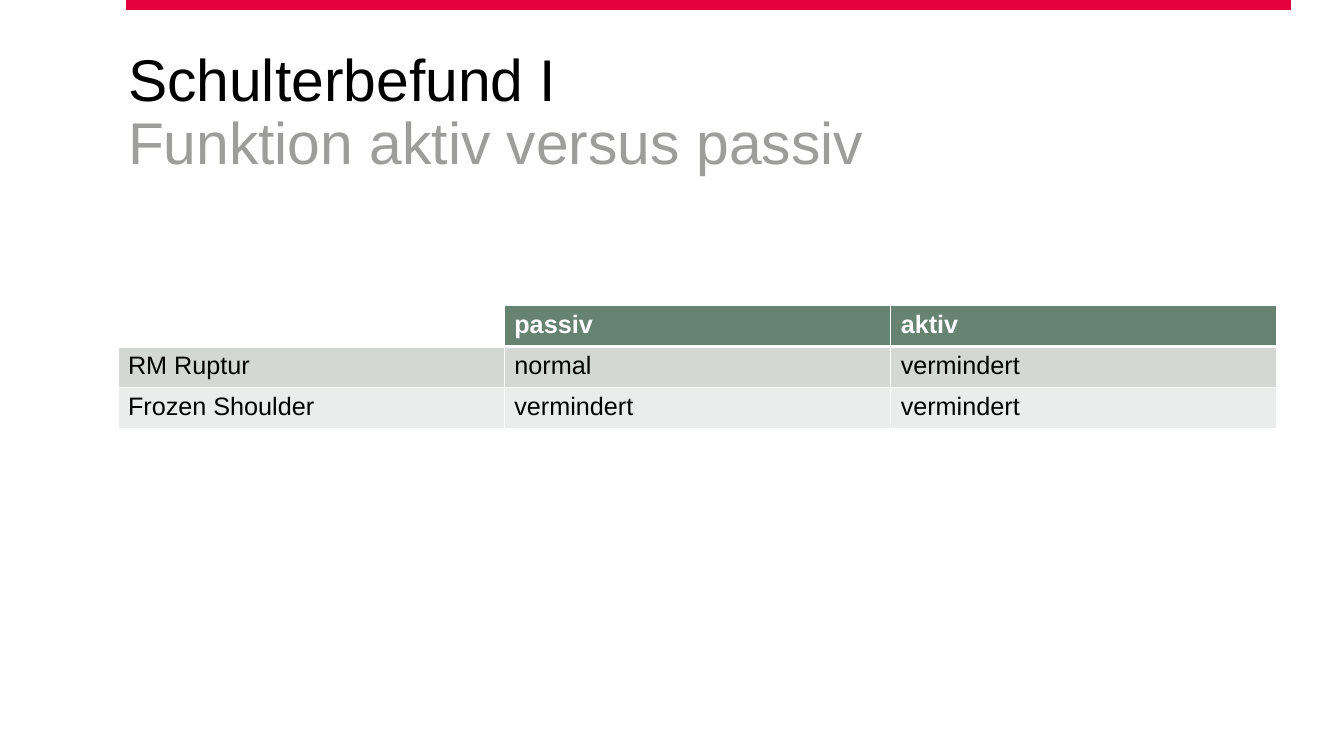
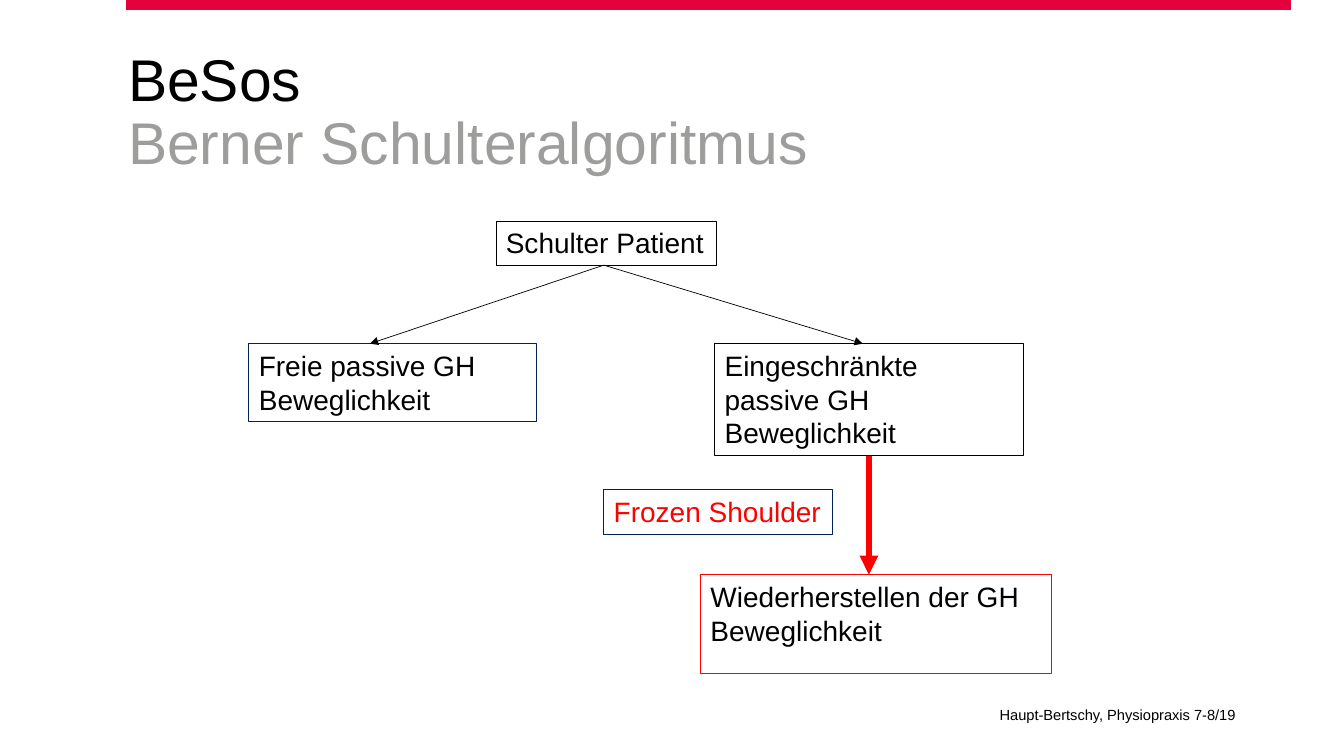
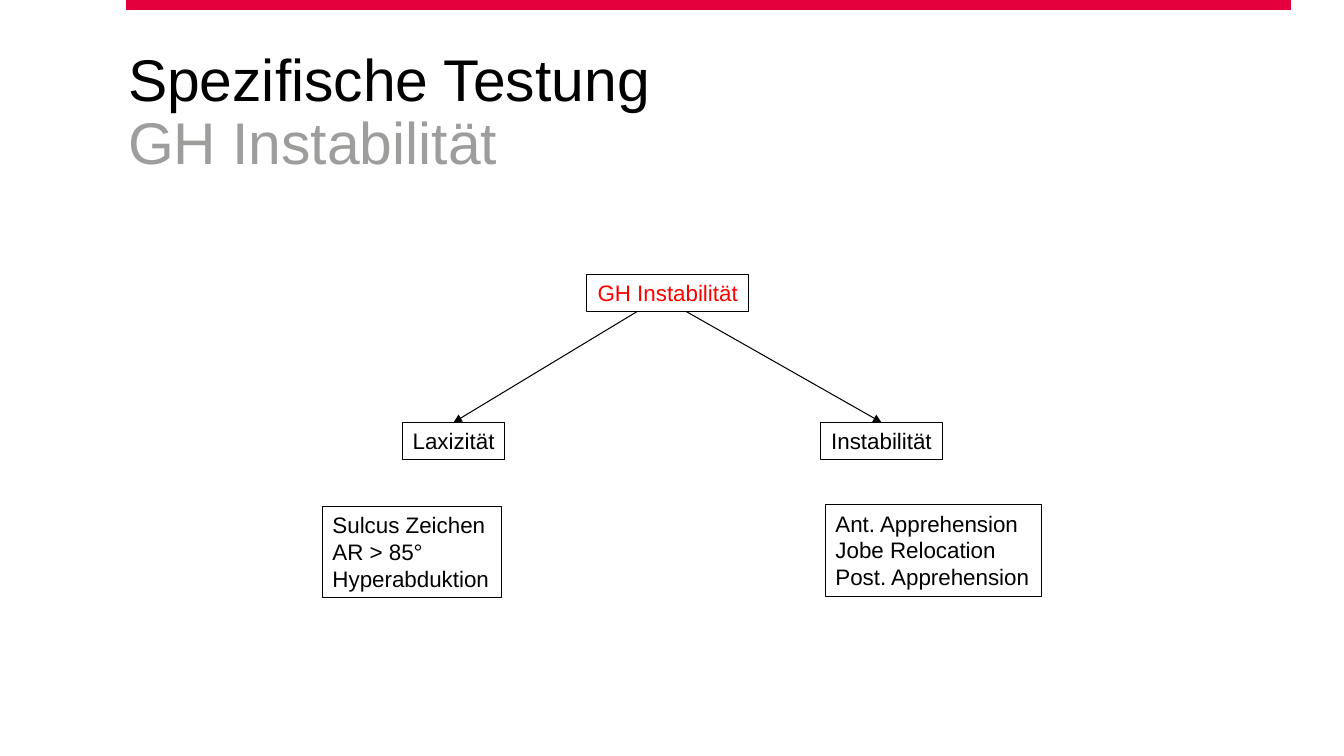
import pptx
import pptx.util
import pptx.dml.color
import pptx.enum.shapes
import pptx.enum.text
import pptx.oxml.xmlchemy

Pt = pptx.util.Pt
RGB = pptx.dml.color.RGBColor
ALIGN = pptx.enum.text.PP_ALIGN
Element = pptx.oxml.xmlchemy.OxmlElement

BLACK = RGB(0x00, 0x00, 0x00)
WHITE = RGB(0xFF, 0xFF, 0xFF)
GREY = RGB(0x9D, 0x9D, 0x9C)
CRIMSON = RGB(0xE4, 0x00, 0x3C)
RED = RGB(0xFF, 0x00, 0x00)
NAVY = RGB(0x00, 0x20, 0x60)
GREEN = RGB(0x66, 0x82, 0x71)
ROW_FILLS = (RGB(0xD3, 0xD8, 0xD5), RGB(0xEA, 0xED, 0xEB))
TOP, BOTTOM = 0, 2


class Deck:
    """Holds the shared style and the current slide."""
    font = "Arial"
    left, width = 84.25, 828

    def __init__(self):
        self.prs = pptx.Presentation()
        self.prs.slide_width, self.prs.slide_height = Pt(960), Pt(540)

    def slide(self, title, subtitle):
        self.s = self.prs.slides.add_slide(self.prs.slide_layouts[1])
        self.line((90, 3.6), (922.3, 3.6), CRIMSON, 7.5, arrow=False)
        heading, body = self.s.placeholders
        self.heading(body, subtitle, 68.4, 51, GREY)
        self.heading(heading, title, 23, 59, BLACK)

    def heading(self, sp, text, top, height, color):
        sp.left, sp.top = Pt(self.left), Pt(top)
        sp.width, sp.height = Pt(self.width), Pt(height)
        self.frame(sp, True, 7.2)
        p = sp.text_frame.paragraphs[0]
        pPr = p._p.get_or_add_pPr()
        pPr.set("marL", "0")
        pPr.set("indent", "0")
        pPr.append(Element("a:buNone"))
        p.space_before = Pt(0)
        p.alignment = ALIGN.LEFT
        self.run(p, text, 42, color)

    def frame(self, sp, wrap, inset=3.6):
        tf = sp.text_frame
        tf.word_wrap = wrap
        tf.auto_size = pptx.enum.text.MSO_AUTO_SIZE.NONE
        tf.vertical_anchor = pptx.enum.text.MSO_ANCHOR.TOP
        tf.margin_left = tf.margin_right = Pt(7.2)
        tf.margin_top, tf.margin_bottom = Pt(inset), Pt(3.6)

    def run(self, p, text, size, color, bold=False):
        r = p.add_run()
        r.text = text
        r.font.name, r.font.size, r.font.bold = self.font, Pt(size), bold
        r.font.color.rgb = color

    def fill_text(self, sp, paragraphs, size, color, align):
        tf = sp.text_frame
        for i, text in enumerate(paragraphs):
            p = tf.add_paragraph() if i else tf.paragraphs[0]
            p.alignment = align
            for j, part in enumerate(text.split("\n")):
                if j:
                    p.add_line_break()
                self.run(p, part, size, color)

    def box(self, at, *paragraphs, size=20, color=BLACK, line=BLACK,
            weight=0.75, wrap=False, align=ALIGN.LEFT):
        sp = self.s.shapes.add_shape(
            pptx.enum.shapes.MSO_SHAPE.RECTANGLE, *map(Pt, at))
        sp.shadow.inherit = False
        sp.fill.background()
        sp.line.color.rgb, sp.line.width = line, Pt(weight)
        self.frame(sp, wrap)
        self.fill_text(sp, paragraphs, size, color, align)
        return sp

    def label(self, at, text, size):
        sp = self.s.shapes.add_textbox(*map(Pt, at))
        self.frame(sp, True)
        self.fill_text(sp, [text], size, BLACK, ALIGN.LEFT)

    def line(self, start, end, color=BLACK, weight=0.75, arrow=True,
             begin_at=None, end_at=None):
        sp = self.s.shapes.add_connector(
            pptx.enum.shapes.MSO_CONNECTOR.STRAIGHT, *map(Pt, start + end))
        sp.line.color.rgb, sp.line.width = color, Pt(weight)
        if arrow:
            tail = Element("a:tailEnd")
            tail.set("type", "triangle")
            sp.line._get_or_add_ln().append(tail)
        sp._element.spPr.append(Element("a:effectLst"))
        if begin_at:
            sp.begin_connect(*begin_at)
        if end_at:
            sp.end_connect(*end_at)

    def table(self, top, row_height, rows):
        table = self.s.shapes.add_table(
            len(rows), len(rows[0]), Pt(self.left), Pt(top),
            Pt(self.width), Pt(row_height * len(rows))).table
        table.first_row = table.horz_banding = False
        for i, row in enumerate(rows):
            for j, text in enumerate(row):
                cell = table.cell(i, j)
                head = i == 0
                self.borders(cell, {"lnT": 3 if i == 1 else 1,
                                    "lnB": 3 if head else 1})
                cell.fill.solid()
                if head:
                    cell.fill.fore_color.rgb = GREEN if text else WHITE
                else:
                    cell.fill.fore_color.rgb = ROW_FILLS[(i - 1) % 2]
                if text:
                    self.run(cell.text_frame.paragraphs[0], text, 18,
                             WHITE if head else BLACK, head)

    def borders(self, cell, weights):
        tcPr = cell._tc.get_or_add_tcPr()
        for side in ("lnL", "lnR", "lnT", "lnB"):
            ln = Element("a:" + side)
            ln.set("w", str(int(Pt(weights.get(side, 1)))))
            fill = Element("a:solidFill")
            clr = Element("a:srgbClr")
            clr.set("val", str(WHITE))
            fill.append(clr)
            ln.append(fill)
            tcPr.append(ln)


def main():
    d = Deck()

    # Active versus passive function
    d.slide("Schulterbefund I", "Funktion aktiv versus passiv")
    d.table(218.2, 29.25, [
        ("", "passiv", "aktiv"),
        ("RM Ruptur", "normal", "vermindert"),
        ("Frozen Shoulder", "vermindert", "vermindert"),
    ])

    # Shoulder algorithm
    d.slide("BeSos", "Berner Schulteralgoritmus")
    d.box((177.8, 245.5, 205.2, 55.5), "Freie passive GH Beweglichkeit",
          line=NAVY, wrap=True)
    limited = d.box((510.5, 245.5, 220.3, 80),
                    "Eingeschränkte passive GH Beweglichkeit", wrap=True)
    d.box((354.2, 157.7, 157.7, 31.7), "Schulter Patient", weight=0.25)
    for x in (264.2, 616.3):
        d.line((431.3, 189.4), (x, 245.5), weight=0.5)
    d.box((500.4, 410.4, 250.6, 70.6), "Wiederherstellen der GH Beweglichkeit",
          line=RED, wrap=True)
    d.line((620.65, 325.5), (620.65, 410.4), RED, 4.5,
           begin_at=(limited, BOTTOM))
    d.box((431.3, 349.9, 163.4, 31.7), "Frozen Shoulder", color=RED, line=NAVY)
    d.label((707, 500.4, 205.2, 20.2), "Haupt-Bertschy, Physiopraxis 7-8/19",
            10.5)

    # Instability tests
    d.slide("Spezifische Testung", "GH Instabilität")
    d.box((419, 196, 116, 26.6), "GH Instabilität", size=16, color=RED,
          align=ALIGN.CENTER)
    branches = [
        (455, (287.3, 301.7, 73.4, 26.6), "Laxizität"),
        (490.3, (586.1, 301.7, 87.1, 26.6), "Instabilität"),
    ]
    for start_x, at, text in branches:
        sp = d.box(at, text, size=16, align=ALIGN.CENTER)
        d.line((start_x, 222.6), (at[0] + at[2] / 2, at[1]),
               end_at=(sp, TOP))
    d.box((230.4, 361.6, 127.6, 65.5), "Sulcus Zeichen",
          "AR > 85°\nHyperabduktion", size=16)
    d.box((589.7, 360.5, 154.6, 65.5), "Ant. Apprehension",
          "Jobe Relocation", "Post. Apprehension", size=16)

    d.prs.save("out.pptx")


if __name__ == "__main__":
    main()
